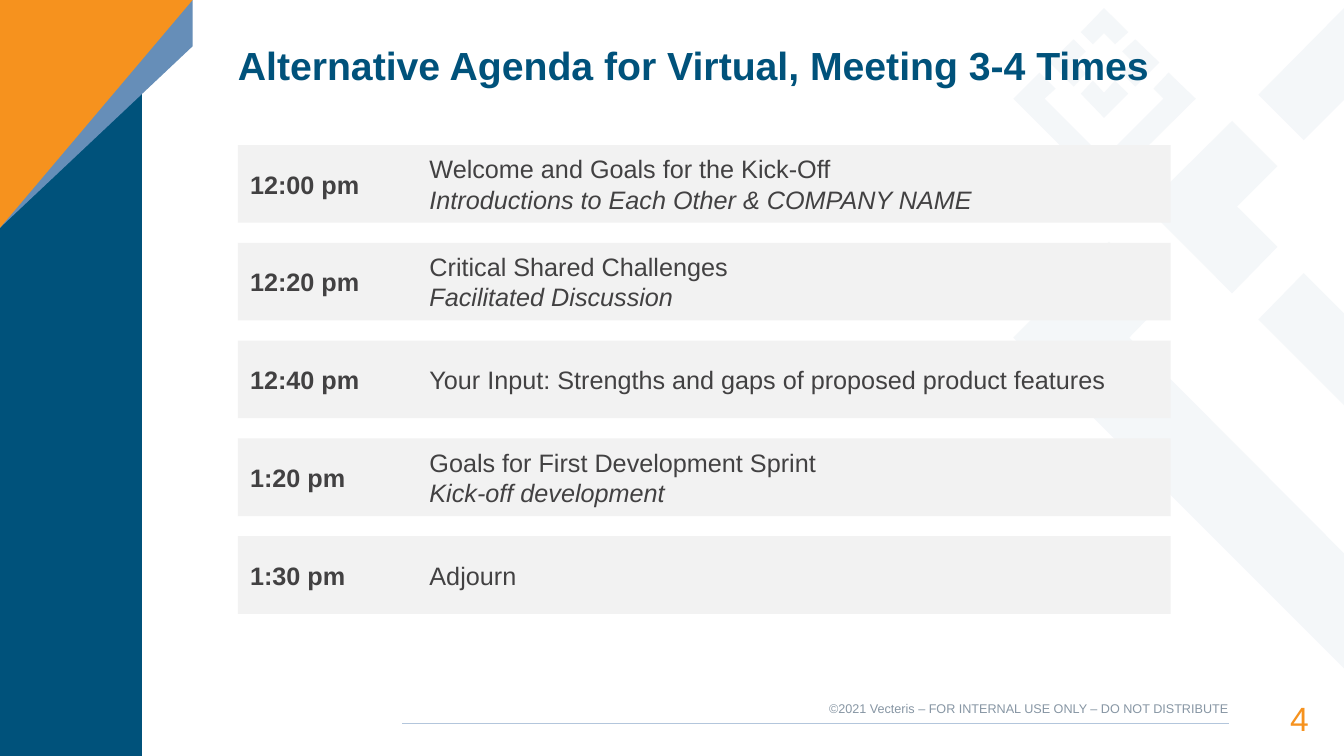
"""Build the agenda slide for a virtual kick-off meeting."""
from dataclasses import dataclass

from lxml import etree
from pptx import Presentation
from pptx import util as u
from pptx.dml.color import RGBColor
from pptx.enum import shapes, text
from pptx.oxml.ns import qn

COLORS = {
    "pattern": "E9EEF4", "navy": "00527B", "blue": "668EB8", "orange": "F6921E",
    "rule": "B3C6DC", "notice": "8796A4", "bar": "F2F2F2", "ink": "424142",
}
FONT = "Arial"
BAR_LEFT, BAR_TOP, BAR_WIDTH, BAR_HEIGHT, BAR_PITCH = 2.36, 1.44, 9.25, 0.77, 0.97


@dataclass(frozen=True)
class Outline:
    points: tuple[tuple[float, float], ...]
    color: str
    opacity: int = 100


@dataclass(frozen=True)
class Span:
    words: str
    size: float
    color: str
    bold: bool = False
    italic: bool = False


@dataclass(frozen=True)
class Area:
    left: float
    top: float
    width: float
    height: float


@dataclass(frozen=True)
class AgendaItem:
    time: str
    topic: str
    detail: str = ""


PATTERN = (
    ((12.22, 1.2), (11.36, 2.05), (12.22, 2.91), (12.67, 2.45), (12.27, 2.05), (12.67, 1.65)),
    ((11, 2.4), (10.05, 3.35), (13.33, 6.63), (13.33, 5.49), (11.2, 3.35), (11.57, 2.97)),
    ((12.93, 2.71), (12.48, 3.17), (13.33, 4.02), (13.33, 3.11)),
    ((13.33, 0.08), (12.48, 0.94), (12.93, 1.39), (13.33, 0.99)),
    ((11.26, 0.39), (11.13, 0.51), (11.24, 0.62), (11.13, 0.73), (11.26, 0.86), (11.5, 0.62)),
    ((10.65, 0.39), (10.41, 0.62), (10.65, 0.86), (10.77, 0.73), (10.66, 0.62), (10.77, 0.51)),
    ((10.95, 0.08), (10.72, 0.32), (10.84, 0.44), (10.95, 0.33), (11.06, 0.44), (11.19, 0.32)),
    ((10.84, 0.8), (10.72, 0.93), (10.95, 1.17), (11.19, 0.93), (11.06, 0.8), (10.95, 0.92)),
    ((10.31, 0.72), (10.05, 0.98), (10.95, 1.88), (11.86, 0.98), (11.59, 0.72),
     (11.44, 0.88), (11.54, 0.98), (10.95, 1.57), (10.36, 0.98), (10.47, 0.88)),
)
OUTLINES = [Outline(points, "pattern", 47) for points in PATTERN] + [
    Outline(((0, 0), (1.41, 0), (1.41, 7.5), (0, 7.5)), "navy"),
    Outline(((1.91, 0), (0, 0), (0, 2.26), (1.91, 0.46)), "blue"),
    Outline(((1.91, 0), (0, 0), (0, 2.26)), "orange"),
]
AGENDA = (
    AgendaItem("12:00 pm", "Welcome and Goals for the Kick-Off",
               "Introductions to Each Other & COMPANY NAME"),
    AgendaItem("12:20 pm", "Critical Shared Challenges", "Facilitated Discussion"),
    AgendaItem("12:40 pm", "Your Input: Strengths and gaps of proposed product features"),
    AgendaItem("1:20 pm", "Goals for First Development Sprint", "Kick-off development"),
    AgendaItem("1:30 pm", "Adjourn"),
)


def rgb(name: str) -> RGBColor:
    return RGBColor.from_string(COLORS[name])


def paint(shape, color: str) -> None:
    shape.shadow.inherit = False
    shape.fill.solid()
    shape.fill.fore_color.rgb = rgb(color)
    shape.line.fill.background()


def draw_outline(page, outline: Outline) -> None:
    points = [(u.Inches(x), u.Inches(y)) for x, y in outline.points]
    builder = page.shapes.build_freeform(*points[0])
    builder.add_line_segments(points[1:], close=True)
    shape = builder.convert_to_shape()
    paint(shape, outline.color)
    if outline.opacity < 100:
        tint = next(shape.element.spPr.iter(qn("a:srgbClr")))
        etree.SubElement(tint, qn("a:alpha")).set("val", str(outline.opacity * 1000))


def draw_text(page, area: Area, spans: list[Span], align=text.PP_ALIGN.LEFT,
              anchor=text.MSO_ANCHOR.MIDDLE, spacing: float = 1.0) -> None:
    box = page.shapes.add_textbox(*map(u.Inches, (area.left, area.top, area.width, area.height)))
    frame = box.text_frame
    frame.word_wrap = True
    frame.vertical_anchor = anchor
    frame.margin_left = frame.margin_top = frame.margin_right = frame.margin_bottom = 0
    for index, span in enumerate(spans):
        para = frame.add_paragraph() if index else frame.paragraphs[0]
        para.text = span.words
        para.alignment = align
        para.line_spacing = spacing
        para.font.name = FONT
        para.font.size = u.Pt(span.size)
        para.font.bold = span.bold
        para.font.italic = span.italic
        para.font.color.rgb = rgb(span.color)


def draw_footer(page) -> None:
    rule = page.shapes.add_connector(
        shapes.MSO_CONNECTOR.STRAIGHT, *map(u.Inches, (3.99, 7.18, 12.19, 7.18)))
    rule.line.color.rgb = rgb("rule")
    rule.line.width = u.Pt(0.82)
    etree.SubElement(rule.element.spPr, qn("a:effectLst"))
    draw_text(page, Area(12.18, 6.9, 0.8, 0.38), [Span("4", 24, "orange")],
              text.PP_ALIGN.RIGHT, spacing=1.19)
    notice = "©2021 Vecteris – FOR INTERNAL USE ONLY – DO NOT DISTRIBUTE"
    draw_text(page, Area(7.92, 6.95, 4.26, 0.15), [Span(notice, 9, "notice")],
              text.PP_ALIGN.RIGHT, text.MSO_ANCHOR.TOP)


def draw_item(page, item: AgendaItem, top: float) -> None:
    bar = page.shapes.add_shape(
        shapes.MSO_SHAPE.RECTANGLE, *map(u.Inches, (BAR_LEFT, top, BAR_WIDTH, BAR_HEIGHT)))
    paint(bar, "bar")
    draw_text(page, Area(2.48, top, 1.5, BAR_HEIGHT), [Span(item.time, 18, "ink", bold=True)])
    spans = [Span(item.topic, 18, "ink")]
    if item.detail:
        spans.append(Span(item.detail, 18, "ink", italic=True))
    draw_text(page, Area(4.26, top, 7.23, BAR_HEIGHT), spans)


def main() -> None:
    deck = Presentation()
    deck.slide_width, deck.slide_height = u.Inches(13.33), u.Inches(7.5)
    page = deck.slides.add_slide(deck.slide_layouts[6])
    for outline in OUTLINES:
        draw_outline(page, outline)
    draw_footer(page)
    draw_text(page, Area(BAR_LEFT, 0.13, 10.97, 1.08),
              [Span("Alternative Agenda for Virtual, Meeting 3-4 Times", 28, "navy", bold=True)],
              spacing=0.9)
    for row, item in enumerate(AGENDA):
        draw_item(page, item, BAR_TOP + row * BAR_PITCH)
    deck.save("out.pptx")


if __name__ == "__main__":
    main()
